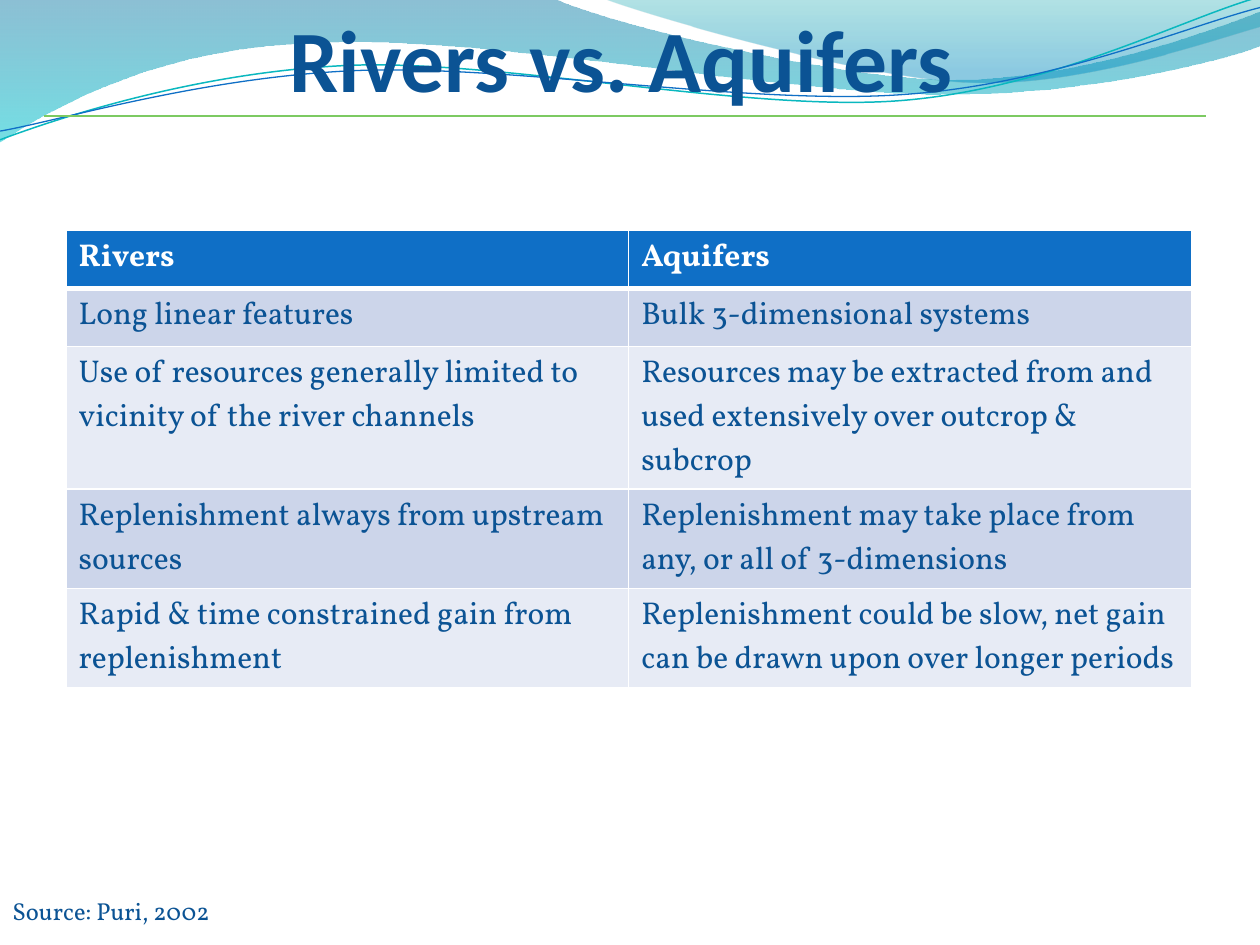
import pptx
import pptx.util
import pptx.dml.color
import pptx.enum.shapes
import pptx.enum.text
import pptx.oxml
import pptx.oxml.ns

Pt = pptx.util.Pt
qn = pptx.oxml.ns.qn

COLORS = {
    "text": "0B5394", "white": "FFFFFF", "header": "0F6FC6",
    "odd_row": "CCD5EA", "even_row": "E7EBF5", "rule": "7CCA62",
    "teal_line": "0AB8BF", "blue_line": "0F6FC6",
    "deep_blue": "0074A1", "cyan": "00C6CF", "teal": "00A1A9", "sky": "008BBF",
}
BODY_FONT = "Vollkorn"

TITLE = "Rivers vs. Aquifers"
SOURCE = "Source: Puri, 2002"
ROWS = [
    ("Rivers", "Aquifers"),
    ("Long linear features", "Bulk 3-dimensional systems"),
    ("Use of resources generally limited to vicinity of the river channels",
     "Resources may be extracted from and used extensively over outcrop & subcrop"),
    ("Replenishment always from upstream sources",
     "Replenishment may take place from any, or all of 3-dimensions"),
    ("Rapid & time constrained gain from replenishment",
     "Replenishment could be slow, net gain can be drawn upon over longer periods"),
]
ROW_HEIGHTS = [33.1, 33.1, 81.4, 56.9, 56.9]
COLUMN_WIDTH = 321.5

# Segments hold one point for a straight side and three for a cubic curve.
WAVES = [
    {"start": (0, 0), "segments": [
        [(316.8, -0.7)],
        [(342.7, 12.2), (478.1, 45.4), (545.8, 45.4)],
        [(614.2, 45.4), (689.8, 18.7), (720, 6.5)],
        [(720.7, 25.9)],
        [(707.8, 31.7), (626.4, 54.7), (537.1, 54)],
        [(447.8, 54), (275, 20.2), (185, 24.5)],
        [(92.9, 25.9), (33.1, 59.8), (-0.7, 81.4)]],
     "stops": [(0, "deep_blue", 45), (1, "cyan", 55)]},
    {"start": (344.9, -0.7), "segments": [
        [(366.5, 7.9), (491, 44.6), (553.7, 46.8)],
        [(616.3, 49.7), (691.9, 23), (720, 15.1)],
        [(720, 0)]],
     "stops": [(0, "teal", 30), (0.8, "sky", 45)]},
    {"start": (0, 79.9), "segments": [
        [(34.6, 67), (113.8, 41), (199.4, 37.4)],
        [(284.4, 33.8), (427, 64.1), (513.4, 57.6)],
        [(599.8, 51.1), (675.4, 10.8), (718.6, -1.4)]],
     "line": ("teal_line", 0.85)},
    {"start": (0, 74.9), "segments": [
        [(33.8, 69.1), (115.9, 43.9), (203.8, 40.3)],
        [(290.2, 36.7), (429.8, 60.5), (516.2, 54)],
        [(601.9, 48.2), (677.5, 15.1), (720, 4.3)]],
     "line": ("blue_line", 0.75)},
]


def rgb(name):
    return pptx.dml.color.RGBColor.from_string(COLORS[name])


def format_text(text_frame, font_name, size, color, bold=False):
    for paragraph in text_frame.paragraphs:
        for run in paragraph.runs:
            run.font.name = font_name
            run.font.size = Pt(size)
            run.font.bold = bold
            run.font.color.rgb = rgb(color)


def add_wave(slide, wave):
    points = [(Pt(x), Pt(y)) for segment in wave["segments"] for x, y in segment]
    start_x, start_y = wave["start"]
    builder = slide.shapes.build_freeform(Pt(start_x), Pt(start_y))
    builder.add_line_segments(points, close="stops" in wave)
    shape = builder.convert_to_shape()
    shape.shadow.inherit = False

    sides = iter(list(shape._element.iter(qn("a:lnTo"))))
    for segment in wave["segments"]:
        side = next(sides)
        if len(segment) == 3:
            curve = pptx.oxml.parse_xml(
                f'<a:cubicBezTo {pptx.oxml.ns.nsdecls("a")}/>')
            side.addprevious(curve)
            for corner in (side, next(sides), next(sides)):
                curve.append(corner[0])
                corner.getparent().remove(corner)

    if "line" in wave:
        color, width = wave["line"]
        shape.fill.background()
        shape.line.color.rgb = rgb(color)
        shape.line.width = Pt(width)
        return
    shape.fill.gradient()
    shape.fill.gradient_angle = 270
    for stop, (position, color, _) in zip(shape.fill.gradient_stops, wave["stops"]):
        stop.position = position
        stop.color.rgb = rgb(color)
    for color, (_, _, opacity) in zip(shape._element.iter(qn("a:srgbClr")), wave["stops"]):
        color.append(pptx.oxml.parse_xml(
            f'<a:alpha {pptx.oxml.ns.nsdecls("a")} val="{opacity * 1000}"/>'))
    shape.line.fill.background()


def set_borders(cell, widths):
    properties = cell._tc.get_or_add_tcPr()
    for index, (side, width) in enumerate(widths.items()):
        properties.insert(index, pptx.oxml.parse_xml(
            f'<a:ln{side} {pptx.oxml.ns.nsdecls("a")} w="{Pt(width)}"><a:solidFill>'
            f'<a:srgbClr val="{COLORS["white"]}"/></a:solidFill></a:ln{side}>'))


def add_comparison(slide):
    table = slide.shapes.add_table(
        len(ROWS), 2, Pt(37.8), Pt(131.8),
        Pt(2 * COLUMN_WIDTH), Pt(sum(ROW_HEIGHTS))).table
    for column in table.columns:
        column.width = Pt(COLUMN_WIDTH)
    for row_index, texts in enumerate(ROWS):
        table.rows[row_index].height = Pt(ROW_HEIGHTS[row_index])
        header = row_index == 0
        fill = "header" if header else "odd_row" if row_index % 2 else "even_row"
        for column_index, text in enumerate(texts):
            cell = table.cell(row_index, column_index)
            cell.text_frame.text = text
            format_text(cell.text_frame, BODY_FONT, 18,
                        "white" if header else "text", header)
            cell.fill.solid()
            cell.fill.fore_color.rgb = rgb(fill)
            set_borders(cell, {"L": 1, "R": 1, "T": 3 if row_index == 1 else 1,
                               "B": 3 if header else 1})


def add_label(slide, text, box, font_name, size, bold=False):
    text_frame = slide.shapes.add_textbox(*map(Pt, box)).text_frame
    text_frame.word_wrap = True
    text_frame.text = text
    format_text(text_frame, font_name, size, "text", bold)
    return text_frame


def main():
    presentation = pptx.Presentation()
    presentation.slide_width, presentation.slide_height = Pt(720), Pt(540)
    slide = presentation.slides.add_slide(presentation.slide_layouts[6])

    for wave in WAVES:
        add_wave(slide, wave)

    title = add_label(slide, TITLE, (31, 0, 648, 66.2), "Calibri", 50, True)
    title.vertical_anchor = pptx.enum.text.MSO_ANCHOR.MIDDLE
    title.paragraphs[0].alignment = pptx.enum.text.PP_ALIGN.CENTER

    rule = slide.shapes.add_connector(
        pptx.enum.shapes.MSO_CONNECTOR.STRAIGHT, Pt(25.2), Pt(66.2), Pt(689), Pt(66.2))
    rule.line.color.rgb = rgb("rule")
    rule.line.width = Pt(1.5)
    rule._element.spPr.append(pptx.oxml.parse_xml(
        f'<a:effectLst {pptx.oxml.ns.nsdecls("a")}/>'))

    add_comparison(slide)
    add_label(slide, SOURCE, (0, 508.3, 342.7, 23.8), BODY_FONT, 14)
    presentation.save("out.pptx")


if __name__ == "__main__":
    main()
